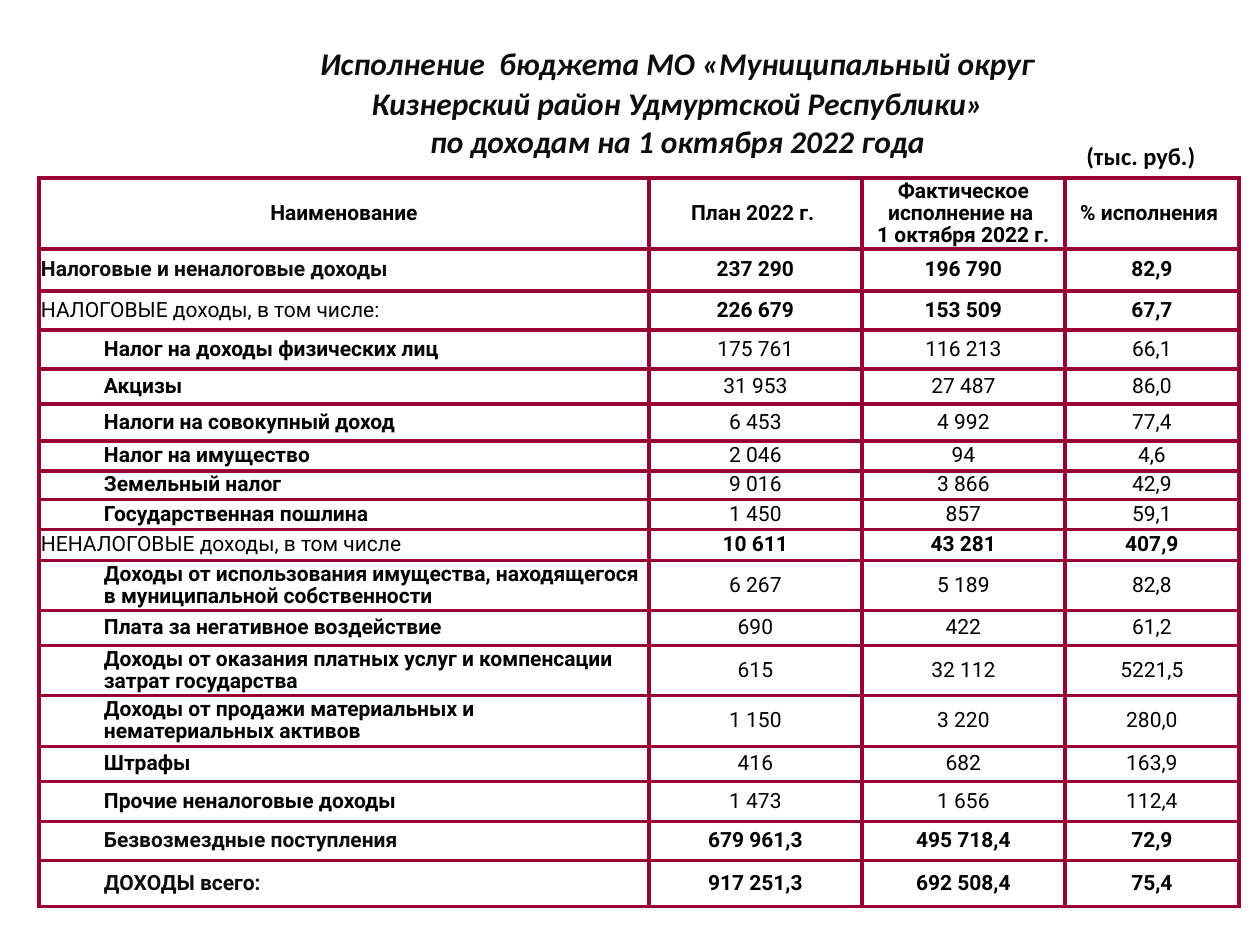
"""Build a slide with a table of budget income against plan."""
from lxml.etree import SubElement
from pptx import Presentation
from pptx.dml.color import RGBColor
from pptx.enum.text import MSO_ANCHOR, MSO_AUTO_SIZE, PP_ALIGN
from pptx.oxml.ns import qn
from pptx.util import Emu, Pt

BLACK = RGBColor(0x00, 0x00, 0x00)
INK = RGBColor(0x0D, 0x0D, 0x0D)
WHITE = RGBColor(0xFF, 0xFF, 0xFF)
WINE = RGBColor(0x99, 0x00, 0x33)

TITLE = ["Исполнение  бюджета МО «Муниципальный округ",
         "Кизнерский район Удмуртской Республики»",
         "по доходам на 1 октября 2022 года"]
UNIT = "(тыс. руб.)"
HEAD = ["Наименование", "План 2022 г. ",
        "Фактическое исполнение на \n1 октября 2022 г.", "% исполнения "]

SUM, GROUP, ITEM, TOTAL = "sum", "group", "item", "total"
STYLES = {
    SUM: dict(indent=0, label=True, value=True, color=INK),
    GROUP: dict(indent=0, label=False, value=True, color=BLACK),
    ITEM: dict(indent=63, label=True, value=False, color=BLACK),
    TOTAL: dict(indent=63, label=True, value=True, color=INK),
}
ROWS = [
    (SUM, 42, "Налоговые и неналоговые доходы", "237 290", "196 790", "82,9"),
    (GROUP, 39, "НАЛОГОВЫЕ доходы, в том числе:", "226 679", "153 509", "67,7"),
    (ITEM, 39, "Налог на доходы физических лиц", "175 761", "116 213", "66,1"),
    (ITEM, 35, "Акцизы", "31 953", "27 487", "86,0"),
    (ITEM, 37, "Налоги на совокупный доход", "6 453", "4 992", "77,4"),
    (ITEM, 30, "Налог на имущество", "2 046", "94", "4,6"),
    (ITEM, 29, "Земельный налог", "9 016", "3 866", "42,9"),
    (ITEM, 30, "Государственная пошлина", "1 450", "857", "59,1"),
    (GROUP, 31, "НЕНАЛОГОВЫЕ доходы, в том числе", "10 611", "43 281", "407,9"),
    (ITEM, 50, "Доходы от использования имущества, находящегося "
     "в муниципальной собственности", "6 267", "5 189", "82,8"),
    (ITEM, 35, "Плата за негативное воздействие", "690", "422", "61,2"),
    (ITEM, 50, "Доходы от оказания платных услуг и компенсации "
     "затрат государства", "615", "32 112", "5221,5"),
    (ITEM, 51, "Доходы от продажи материальных и нематериальных активов",
     "1 150", "3 220", "280,0"),
    (ITEM, 35, "Штрафы", "416", "682", "163,9"),
    (ITEM, 40, "Прочие неналоговые доходы", "1 473", "1 656", "112,4"),
    (TOTAL, 39, "Безвозмездные поступления", "679 961,3", "495 718,4", "72,9"),
    (TOTAL, 46, "ДОХОДЫ всего:", "917 251,3", "692 508,4", "75,4"),
]
WIDTHS = [610, 213, 203, 174]
HEAD_H = 71


def px(count):
    """Turn pixels into EMU."""
    return Emu(round(count * 914400 / 126))


def place(shape, left, top, width, height):
    """Set the box of a shape."""
    shape.left, shape.top = px(left), px(top)
    shape.width, shape.height = px(width), px(height)


def write(frame, lines, face, size, color, bold, align, italic=False):
    """Write one paragraph for each line."""
    for i, line in enumerate(lines):
        para = frame.paragraphs[0] if i == 0 else frame.add_paragraph()
        para.alignment = align
        run = para.add_run()
        run.text = line
        font = run.font
        font.name, font.size = face, Pt(size)
        font.bold, font.italic = bold, italic
        font.color.rgb = color


def border(cell):
    """Draw the four edges of a cell."""
    props = cell._tc.get_or_add_tcPr()
    for side in ("lnL", "lnR", "lnT", "lnB"):
        edge = SubElement(props, qn(f"a:{side}"), w=str(Pt(2.25)))
        fill = SubElement(edge, qn("a:solidFill"))
        SubElement(fill, qn("a:srgbClr"), val=str(WINE))


def fill_cell(cell, text, color, bold, align, indent=0):
    """Format one cell and write its text."""
    border(cell)
    cell.fill.solid()
    cell.fill.fore_color.rgb = WHITE
    cell.vertical_anchor = MSO_ANCHOR.MIDDLE
    cell.margin_left = cell.margin_right = px(2)
    cell.margin_top = cell.margin_bottom = px(2)
    write(cell.text_frame, text.split("\n"), "Roboto", 12, color, bold, align)
    for para in cell.text_frame.paragraphs:
        para.line_spacing = 0.9
        if indent:
            para.level = 1
            props = para._p.get_or_add_pPr()
            props.set("marL", str(px(indent)))
            props.set("indent", "0")


def add_title(slide):
    """Format the title and shift its first line to the right."""
    title = slide.shapes.title
    place(title, 64, 26, 1147, 140)
    frame = title.text_frame
    frame.auto_size = MSO_AUTO_SIZE.NONE
    frame.vertical_anchor = MSO_ANCHOR.BOTTOM
    write(frame, TITLE, "Calibri", 18, INK, True, PP_ALIGN.CENTER, True)
    first = frame.paragraphs[0]
    first.space_after = Pt(1.5)
    first._p.get_or_add_pPr().set("marL", str(px(80)))


def add_table(slide):
    """Add the income table."""
    heights = [HEAD_H] + [row[1] for row in ROWS]
    box = px(39), px(178), px(sum(WIDTHS)), px(sum(heights))
    table = slide.shapes.add_table(len(heights), len(WIDTHS), *box).table
    table.first_row = table.horz_banding = False
    for col, width in zip(table.columns, WIDTHS):
        col.width = px(width)
    for row, height in zip(table.rows, heights):
        row.height = px(height)
    for c, text in enumerate(HEAD):
        fill_cell(table.cell(0, c), text, BLACK, True, PP_ALIGN.CENTER)
    for r, (kind, _, label, *values) in enumerate(ROWS, 1):
        style = STYLES[kind]
        fill_cell(table.cell(r, 0), label, style["color"], style["label"],
                  PP_ALIGN.LEFT, style["indent"])
        for c, value in enumerate(values, 1):
            fill_cell(table.cell(r, c), value, BLACK, style["value"],
                      PP_ALIGN.CENTER)


def add_unit(slide):
    """Add the note on the unit of money."""
    note = slide.shapes.add_textbox(px(1074), px(135), px(168), px(43))
    note.text_frame.word_wrap = True
    write(note.text_frame, [UNIT], "Calibri", 14, BLACK, True, PP_ALIGN.LEFT)


def main():
    """Build and save the deck."""
    deck = Presentation()
    deck.slide_width, deck.slide_height = px(1260), px(945)
    slide = deck.slides.add_slide(deck.slide_layouts[5])
    add_table(slide)
    add_title(slide)
    add_unit(slide)
    deck.save("out.pptx")


if __name__ == "__main__":
    main()
